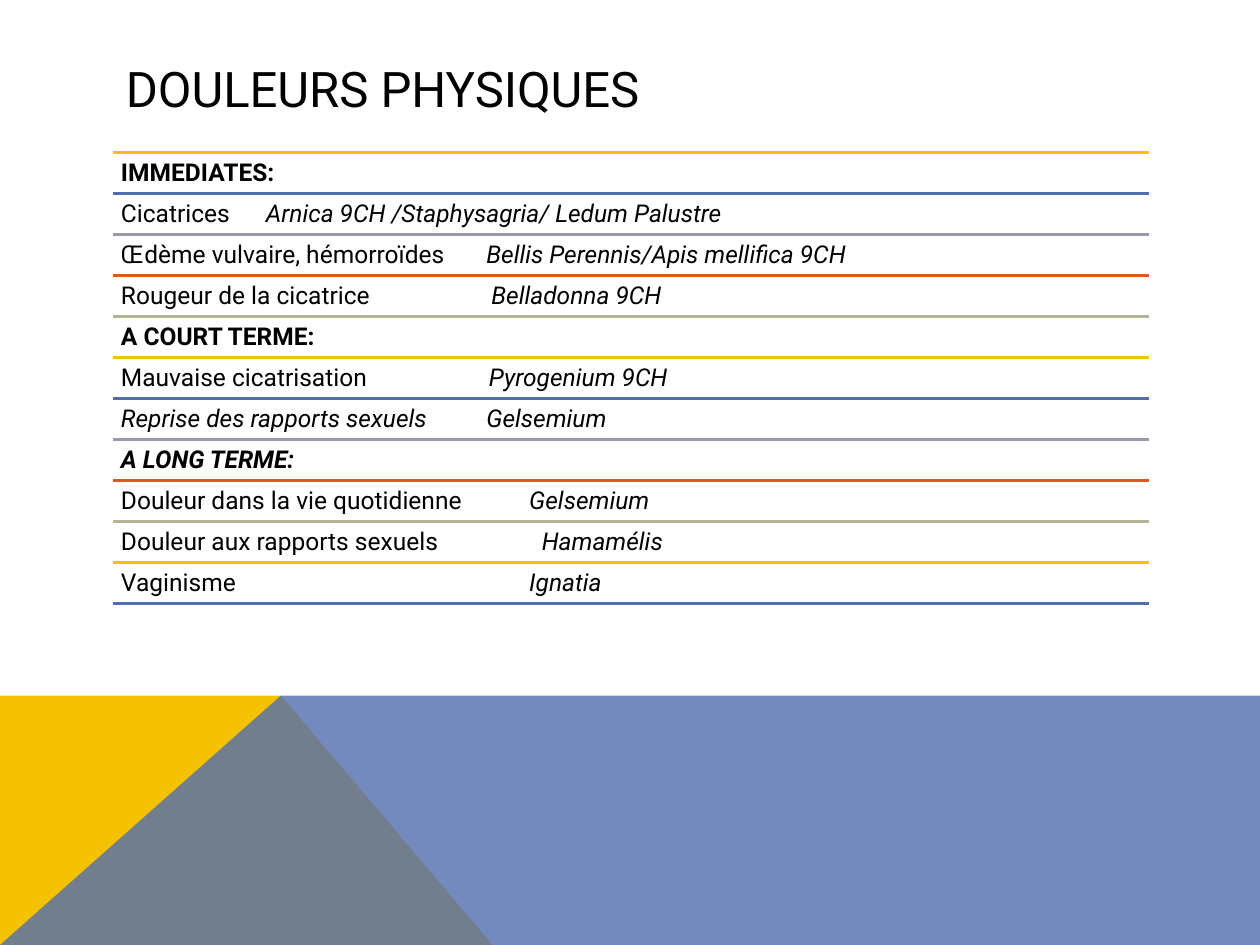
from lxml import etree
from pptx import Presentation
from pptx import util as u
from pptx.dml.color import RGBColor
from pptx.enum import shapes, text
from pptx.oxml.ns import qn

BLACK = RGBColor(0, 0, 0)
YELLOW = RGBColor(0xF5, 0xC2, 0x01)
BLUE = RGBColor(0x52, 0x6D, 0xB0)
MAUVE = RGBColor(0x98, 0x9A, 0xAC)
ORANGE = RGBColor(0xDC, 0x59, 0x24)
SAGE = RGBColor(0xB4, 0xB3, 0x92)
RULE_COLORS = [YELLOW, BLUE, MAUVE, ORANGE, SAGE]
FONT = "Roboto"

TITLE = "DOULEURS PHYSIQUES"
# Each row: label, label style (b, i), remedy, tab stop of the remedy in inches
ROWS = [
    ("IMMEDIATES:", "b", "", 0),
    ("Cicatrices", "", "Arnica 9CH /Staphysagria/ Ledum Palustre", 1.15),
    ("Œdème vulvaire, hémorroïdes", "", "Bellis Perennis/Apis mellifica 9CH", 2.9),
    ("Rougeur de la cicatrice", "", "Belladonna 9CH", 2.94),
    ("A COURT TERME:", "b", "", 0),
    ("Mauvaise cicatrisation", "", "Pyrogenium 9CH", 2.92),
    ("Reprise des rapports sexuels", "i", "Gelsemium", 2.9),
    ("A LONG TERME:", "bi", "", 0),
    ("Douleur dans la vie quotidienne", "", "Gelsemium", 3.24),
    ("Douleur aux rapports sexuels", "", "Hamamélis", 3.34),
    ("Vaginisme", "", "Ignatia", 3.24),
]

W, H = 10, 7.5
LEFT, WIDTH = 0.9, 8.22
TOP, BOTTOM = 1.21, 4.79
ROW_H = (BOTTOM - TOP) / len(ROWS)
BAND_TOP, PEAK, FOOT = 5.52, 2.23, 3.91


def add_polygon(s, points, color, alpha=100):
    """Draw a closed outline, points in inches, alpha in percent."""
    pts = [(u.Inches(x), u.Inches(y)) for x, y in points]
    builder = s.shapes.build_freeform(*pts[0], scale=1.0)
    builder.add_line_segments(pts[1:], close=True)
    sp = builder.convert_to_shape()
    sp.shadow.inherit = False
    sp.fill.solid()
    sp.fill.fore_color.rgb = color
    sp.line.fill.background()
    if alpha < 100:
        clr = sp.fill._xPr.find(".//" + qn("a:srgbClr"))
        etree.SubElement(clr, qn("a:alpha"), val=str(alpha * 1000))


def add_box(s, top, height, inset=None):
    """Add a text box of the content width and return its text frame."""
    sp = s.shapes.add_textbox(*map(u.Inches, (LEFT, top, WIDTH, height)))
    tf = sp.text_frame
    tf.word_wrap = True
    if inset is not None:
        tf.margin_left = tf.margin_right = u.Inches(inset)
        tf.margin_top = tf.margin_bottom = u.Inches(inset)
    return tf


def add_run(p, words, size, style=""):
    """Add one run in the slide font."""
    r = p.add_run()
    r.text = words
    r.font.name, r.font.size = FONT, u.Pt(size)
    r.font.color.rgb = BLACK
    r.font.bold, r.font.italic = "b" in style, "i" in style


def add_rule(s, index):
    """Draw the horizontal rule above the row with this index."""
    y = TOP + index * ROW_H
    ends = map(u.Inches, (LEFT, y, LEFT + WIDTH, y))
    line = s.shapes.add_connector(shapes.MSO_CONNECTOR.STRAIGHT, *ends)
    line.line.color.rgb = RULE_COLORS[index % len(RULE_COLORS)]
    line.line.width = u.Pt(2)
    etree.SubElement(line._element.spPr, qn("a:effectLst"))


def add_row(s, index, label, style, remedy, stop):
    """Write a label and, at its tab stop, the remedy."""
    p = add_box(s, TOP + index * ROW_H, ROW_H, 0.06).paragraphs[0]
    p.line_spacing, p.space_after = 0.9, u.Pt(5)
    add_run(p, label, 14, style)
    if remedy:
        tabs = etree.SubElement(p._p.get_or_add_pPr(), qn("a:tabLst"))
        etree.SubElement(tabs, qn("a:tab"), pos=str(u.Inches(stop)), algn="l")
        add_run(p, "\t" + remedy, 14, "i")


prs = Presentation()
prs.slide_width, prs.slide_height = u.Inches(W), u.Inches(H)
s = prs.slides.add_slide(prs.slide_layouts[6])

add_polygon(s, [(0, H), (0, BAND_TOP), (PEAK, BAND_TOP), (FOOT, H)], YELLOW)
add_polygon(s, [(0, H), (PEAK, BAND_TOP), (W, BAND_TOP), (W, H)], BLUE, 80)

title = add_box(s, 0.4, 0.6)
title.vertical_anchor = text.MSO_ANCHOR.MIDDLE
add_run(title.paragraphs[0], TITLE, 28)

for i, row in enumerate(ROWS):
    add_rule(s, i)
    add_row(s, i, *row)
add_rule(s, len(ROWS))

prs.save("out.pptx")
